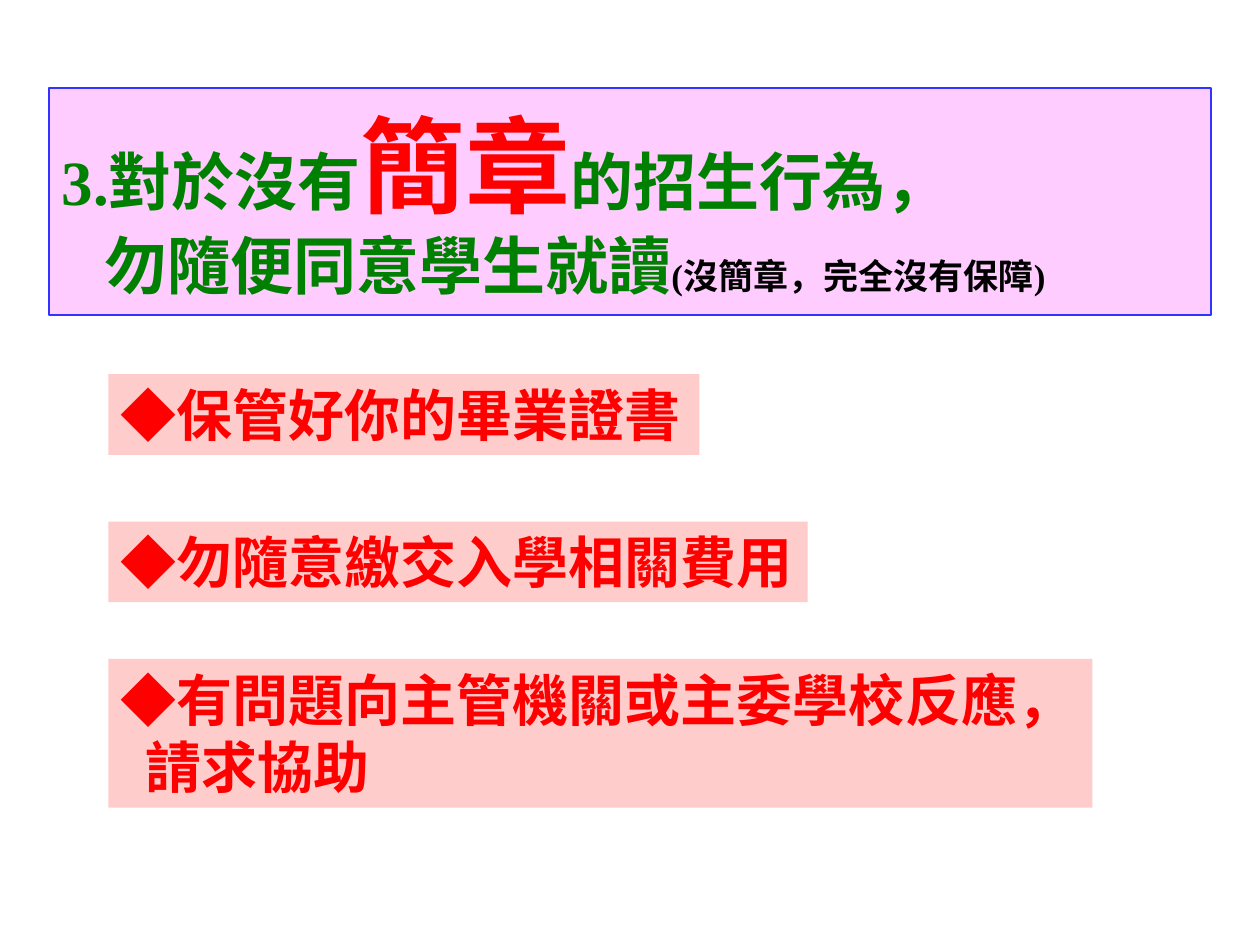
from dataclasses import dataclass

from pptx import Presentation
from pptx.dml.color import RGBColor
from pptx.enum.shapes import MSO_SHAPE
from pptx.enum.text import MSO_ANCHOR, MSO_AUTO_SIZE, PP_ALIGN
from pptx.util import Inches, Pt

RECTANGLE = MSO_SHAPE.RECTANGLE
TOP, MIDDLE = MSO_ANCHOR.TOP, MSO_ANCHOR.MIDDLE
LEFT, JUSTIFY = PP_ALIGN.LEFT, PP_ALIGN.JUSTIFY
GROW = MSO_AUTO_SIZE.SHAPE_TO_FIT_TEXT

GREEN = RGBColor(0x00, 0x80, 0x00)
RED = RGBColor(0xFF, 0x00, 0x00)
BLACK = RGBColor(0x00, 0x00, 0x00)
BLUE = RGBColor(0x33, 0x33, 0xFF)
PINK = RGBColor(0xFF, 0xCC, 0xFF)
ROSE = RGBColor(0xFF, 0xCC, 0xCC)

TITLE_FONT, ADVICE_FONT = "Times New Roman", "Lato"
ADVICE_LEFT = 0.86


@dataclass
class Span:
    text: str
    size: int
    color: RGBColor


@dataclass
class Line:
    spans: list[Span]
    indent: float = 0


@dataclass
class Advice:
    top: float
    width: float
    height: float
    lines: list[Line]


def advice_line(text: str, indent: float = 0) -> Line:
    return Line([Span(text, 32, RED)], indent)


TITLE = [
    Line([Span("3.對於沒有", 36, GREEN), Span("簡章", 60, RED),
          Span("的招生行為，", 36, GREEN)]),
    Line([Span("勿隨便同意學生就讀", 36, GREEN),
          Span("(沒簡章，完全沒有保障)", 20, BLACK)], indent=0.34),
]
ADVICE = [
    Advice(2.97, 4.69, 0.64, [advice_line("◆保管好你的畢業證書")]),
    Advice(4.14, 5.55, 0.64, [advice_line("◆勿隨意繳交入學相關費用")]),
    Advice(5.23, 7.81, 1.18, [advice_line("◆有問題向主管機關或主委學校反應，"),
                              advice_line("請求協助", indent=0.2)]),
]


def add_box(slide, left: float, top: float, width: float, height: float,
            fill: RGBColor, anchor: MSO_ANCHOR):
    sp = slide.shapes.add_shape(RECTANGLE, Inches(left), Inches(top),
                                Inches(width), Inches(height))
    sp.shadow.inherit = False
    sp.fill.solid()
    sp.fill.fore_color.rgb = fill
    sp.line.fill.background()
    sp.text_frame.word_wrap = True
    sp.text_frame.vertical_anchor = anchor
    return sp


def write_lines(tf, lines: list[Line], font: str, align: PP_ALIGN) -> None:
    for i, line in enumerate(lines):
        p = tf.paragraphs[0] if i == 0 else tf.add_paragraph()
        p.alignment = align
        if line.indent:
            p_pr = p._p.get_or_add_pPr()
            p_pr.set("marL", str(Inches(line.indent)))
            p_pr.set("indent", "0")
        for span in line.spans:
            r = p.add_run()
            r.text = span.text
            r.font.name = font
            r.font.size = Pt(span.size)
            r.font.bold = True
            r.font.color.rgb = span.color


def main() -> None:
    prs = Presentation()
    prs.slide_width, prs.slide_height = Inches(10), Inches(7.5)
    slide = prs.slides.add_slide(prs.slide_layouts[6])

    title = add_box(slide, 0.39, 0.7, 9.22, 1.8, PINK, MIDDLE)
    title.line.color.rgb = BLUE
    title.line.width = Pt(1)
    write_lines(title.text_frame, TITLE, TITLE_FONT, LEFT)

    for advice in ADVICE:
        sp = add_box(slide, ADVICE_LEFT, advice.top, advice.width,
                     advice.height, ROSE, TOP)
        sp.text_frame.auto_size = GROW
        write_lines(sp.text_frame, advice.lines, ADVICE_FONT, JUSTIFY)

    prs.save("out.pptx")


if __name__ == "__main__":
    main()
